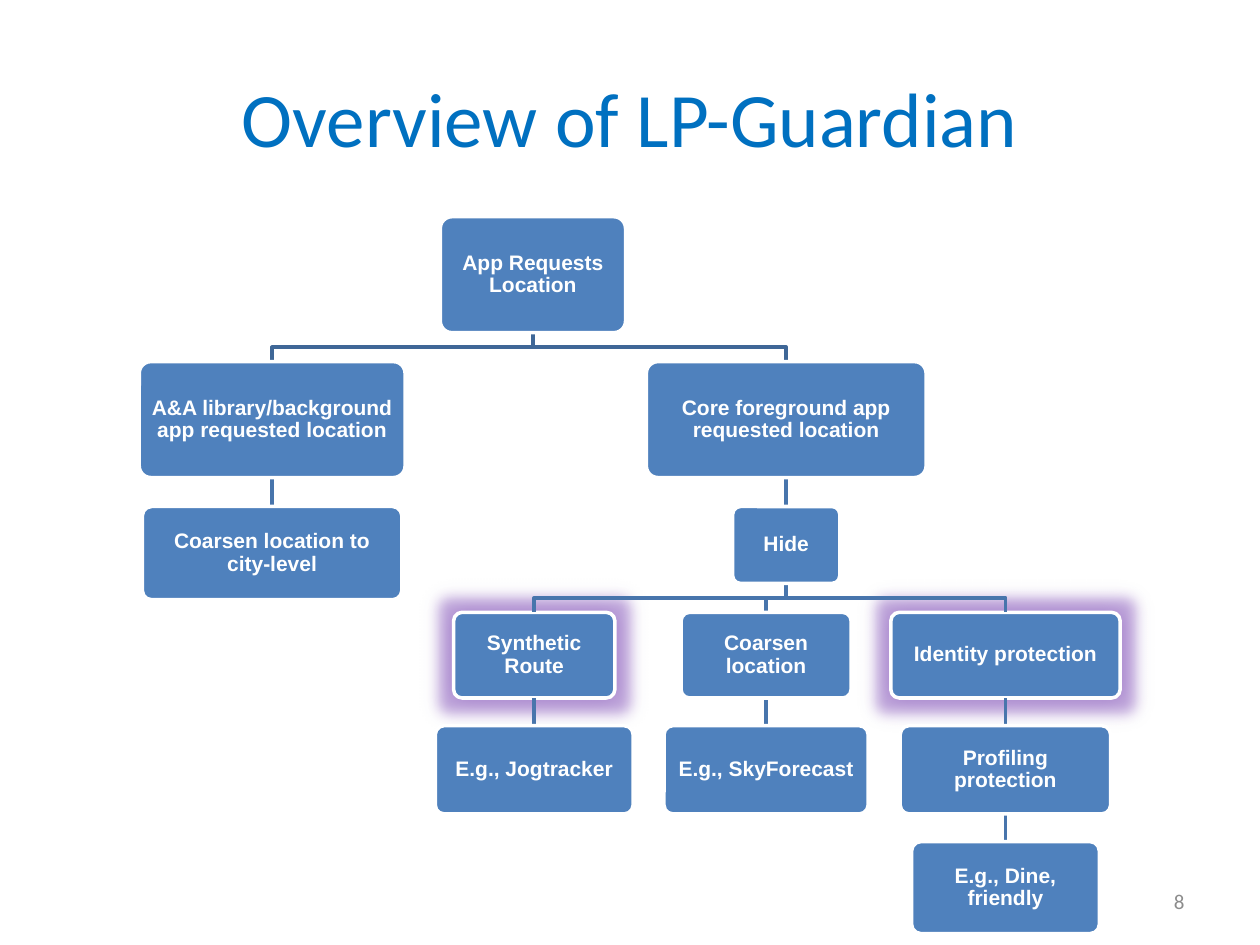
from lxml import etree
from pptx import Presentation
from pptx import util as u
from pptx.dml.color import RGBColor
from pptx.enum import shapes, text
from pptx.oxml.ns import qn

COLORS = {"title": "0070C0", "box": "4F81BD", "white": "FFFFFF", "upper": "3F6797",
          "lower": "4875AC", "glow": "753EB1", "number": "8C8C8C"}
TITLE = "Overview of LP-Guardian"
PAGE = "8"

# Tree rows: top of each level, and centre of each column, in inches
ROWS = [1.72, 2.87, 4.02, 4.86, 5.76, 6.68]
COLUMNS = {"library": 2.16, "root": 4.23, "route": 4.24, "coarsen": 6.08,
           "core": 6.24, "identity": 7.98}

# key: (text, row, column, width, height, parent)
BOXES = {
    "request": ("App Requests Location", 0, "root", 1.47, 0.92, None),
    "library": ("A&A library/background app requested location", 1, "library", 2.11, 0.92, "request"),
    "city": ("Coarsen location to city-level", 2, "library", 2.06, 0.74, "library"),
    "core": ("Core foreground app requested location", 1, "core", 2.22, 0.92, "request"),
    "hide": ("Hide", 2, "core", 0.85, 0.61, "core"),
    "route": ("Synthetic Route", 3, "route", 1.28, 0.68, "hide"),
    "running": ("E.g., Jogtracker", 4, "route", 1.57, 0.7, "route"),
    "coarsen": ("Coarsen location", 3, "coarsen", 1.35, 0.68, "hide"),
    "weather": ("E.g., SkyForecast", 4, "coarsen", 1.62, 0.7, "coarsen"),
    "identity": ("Identity protection", 3, "identity", 1.82, 0.68, "hide"),
    "profiling": ("Profiling protection", 4, "identity", 1.67, 0.7, "identity"),
    "social": ("E.g., Dine, friendly", 5, "identity", 1.49, 0.73, "profiling"),
}
HIGHLIGHTED = ["identity", "route"]


def rgb(name):
    return RGBColor.from_string(COLORS[name])


def write(frame, words, size, font, color, align, bold=False):
    frame.word_wrap = True
    frame.vertical_anchor = text.MSO_ANCHOR.MIDDLE
    paragraph = frame.paragraphs[0]
    paragraph.alignment = align
    run = paragraph.add_run()
    run.text = words
    run.font.size, run.font.name, run.font.bold = u.Pt(size), font, bold
    run.font.color.rgb = rgb(color)
    return paragraph


def add_glow(box):
    """Wide soft glow with a tighter, blurred shadow inside it."""
    effects = box.element.spPr.find(qn("a:effectLst"))
    glow = etree.SubElement(effects, qn("a:glow"), rad=str(u.Inches(0.21)))
    shadow = etree.SubElement(effects, qn("a:outerShdw"), blurRad=str(u.Inches(0.15)),
                              dist="0", dir="0", algn="ctr", rotWithShape="0")
    for effect in (glow, shadow):
        color = etree.SubElement(effect, qn("a:srgbClr"), val=COLORS["glow"])
        etree.SubElement(color, qn("a:alpha"), val="40000")


def add_box(words, row, column, width, height):
    box = slide.shapes.add_shape(
        shapes.MSO_SHAPE.ROUNDED_RECTANGLE, u.Inches(COLUMNS[column] - width / 2),
        u.Inches(ROWS[row]), u.Inches(width), u.Inches(height))
    box.adjustments[0] = 0.1
    box.shadow.inherit = False
    box.fill.solid()
    box.fill.fore_color.rgb = rgb("box")
    box.line.color.rgb = rgb("white")
    box.line.width = u.Pt(2)
    frame = box.text_frame
    frame.margin_left = frame.margin_right = u.Inches(0.07)
    frame.margin_top = frame.margin_bottom = u.Inches(0.07)
    paragraph = write(frame, words, 12, "Arial", "white", text.PP_ALIGN.CENTER, True)
    paragraph.line_spacing = 0.9
    return box


def add_link(parent, child, color):
    start_x, start_y = parent.left + parent.width // 2, parent.top + parent.height
    end_x, end_y = child.left + child.width // 2, child.top
    if abs(start_x - end_x) < u.Inches(0.01):
        link = slide.shapes.add_connector(
            shapes.MSO_CONNECTOR.STRAIGHT, start_x, start_y, end_x, end_y)
        link.begin_connect(parent, 2)
        link.end_connect(child, 0)
        etree.SubElement(link.element.spPr, qn("a:effectLst"))
    else:
        middle = (start_y + end_y) // 2
        builder = slide.shapes.build_freeform(start_x, start_y)
        builder.add_line_segments(
            [(start_x, middle), (end_x, middle), (end_x, end_y)], close=False)
        link = builder.convert_to_shape()
        link.fill.background()
        link.shadow.inherit = False
    link.line.color.rgb = rgb(color)
    link.line.width = u.Pt(2)
    return link


deck = Presentation()
deck.slide_width, deck.slide_height = u.Inches(10), u.Inches(7.5)
slide = deck.slides.add_slide(deck.slide_layouts[5])

# Title
title = slide.shapes.title
title.left, title.top, title.width, title.height = map(u.Inches, (0.5, 0.3, 9, 1.25))
write(title.text_frame, TITLE, 44, "Calibri", "title", text.PP_ALIGN.CENTER)

# Boxes, the glowing ones at the back
order = HIGHLIGHTED + [key for key in BOXES if key not in HIGHLIGHTED]
nodes = {key: add_box(*BOXES[key][:5]) for key in order}
for key in HIGHLIGHTED:
    add_glow(nodes[key])

# Links, between the glowing boxes and the others
for key, (*_, parent) in BOXES.items():
    if parent:
        color = "upper" if parent == "request" else "lower"
        link = add_link(nodes[parent], nodes[key], color)
        nodes["request"].element.addprevious(link.element)

# Page number
number = slide.shapes.add_textbox(*map(u.Inches, (7.17, 6.95, 2.33, 0.4)))
write(number.text_frame, PAGE, 12, "Calibri", "number", text.PP_ALIGN.RIGHT)

deck.save("out.pptx")
